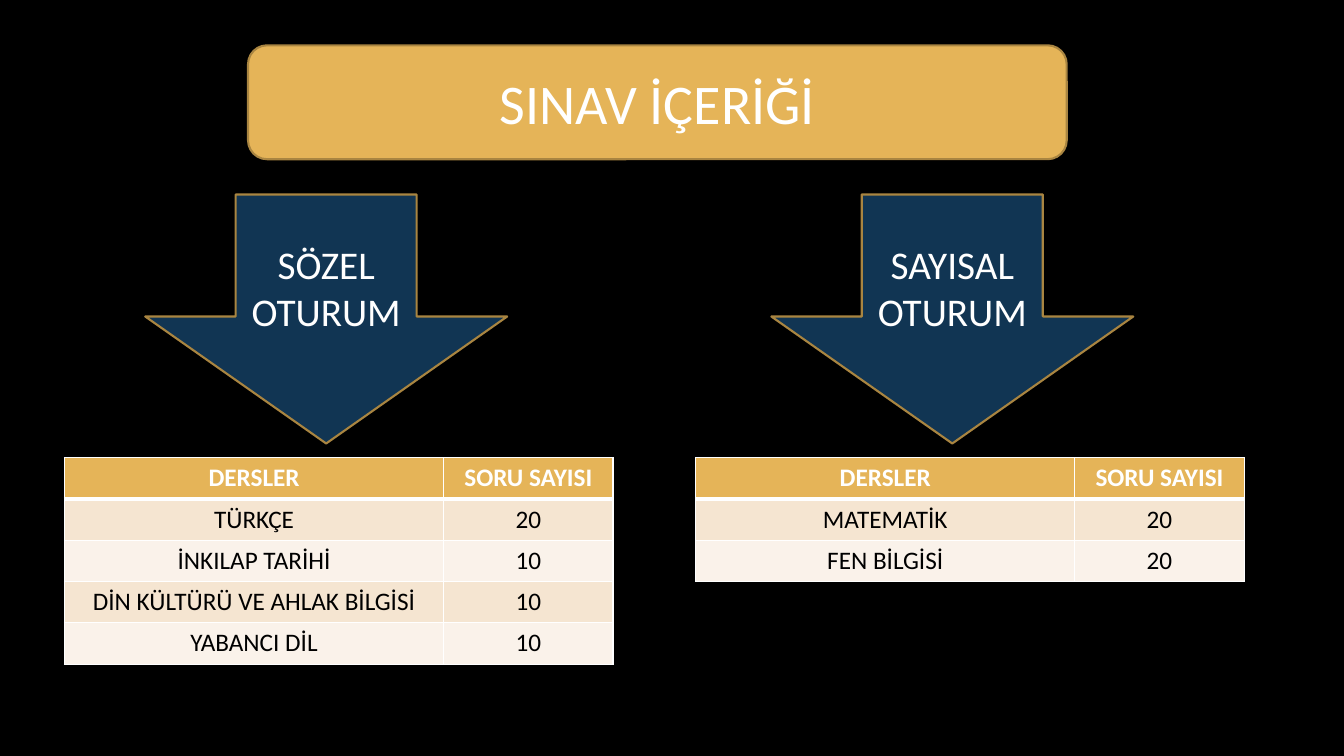
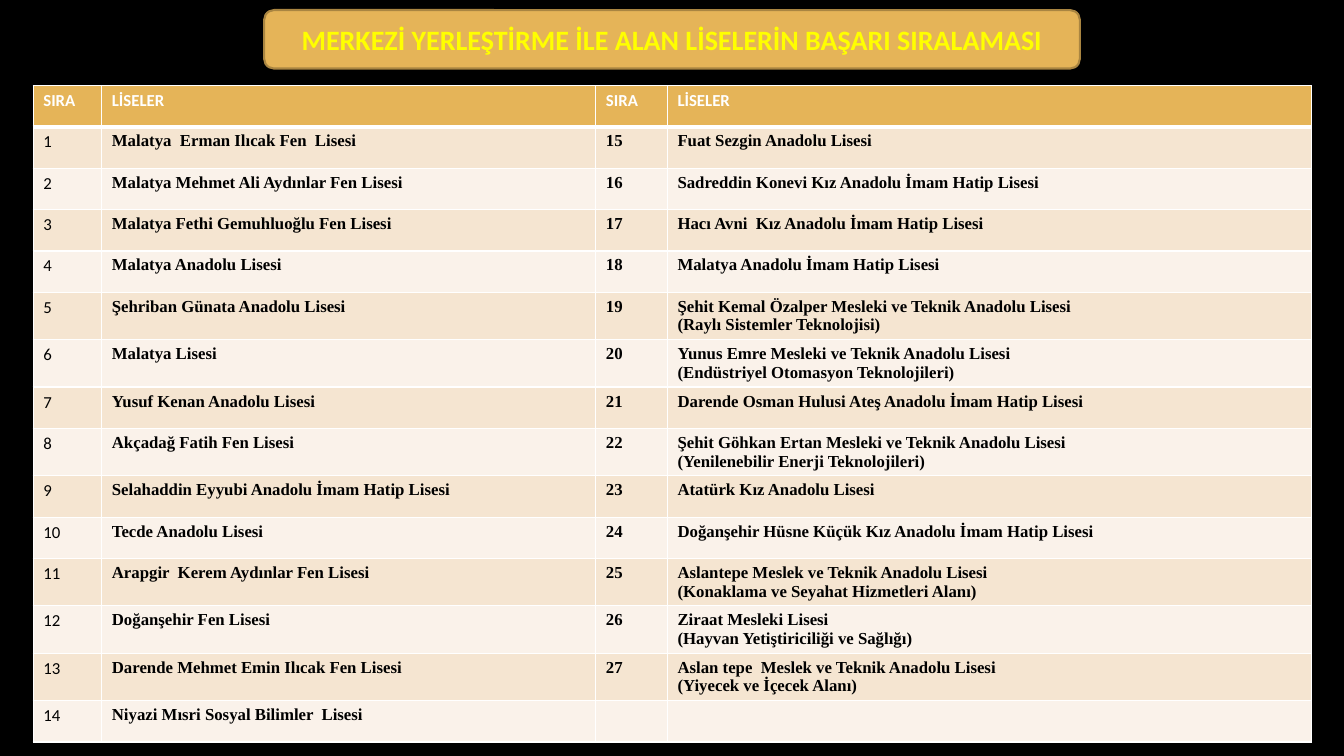
from dataclasses import dataclass
from itertools import zip_longest
from typing import Any

from lxml.etree import SubElement
from pptx import Presentation
from pptx.dml.color import RGBColor
from pptx.enum.shapes import MSO_SHAPE as SHAPE
from pptx.enum.text import MSO_ANCHOR as ANCHOR, MSO_AUTO_SIZE as AUTO_SIZE, PP_ALIGN as ALIGN
from pptx.oxml.ns import qn
from pptx.util import Inches, Pt

BLACK = RGBColor(0x00, 0x00, 0x00)
WHITE = RGBColor(0xFF, 0xFF, 0xFF)
YELLOW = RGBColor(0xFF, 0xFF, 0x00)
GOLD = RGBColor(0xE5, 0xB4, 0x58)
BRONZE = RGBColor(0xA9, 0x85, 0x41)
NAVY = RGBColor(0x11, 0x35, 0x53)
BANDS = (RGBColor(0xF5, 0xE5, 0xD1), RGBColor(0xFA, 0xF2, 0xEA))

ROW_HEIGHT = Inches(0.41)
PLAIN = {"name": "Calibri", "bold": False}
STRONG = {"name": "Calibri", "bold": True}
SERIF = {"name": "Times New Roman", "bold": True}


@dataclass(frozen=True)
class Box:
    left: float
    top: float
    width: float
    height: float

    def emu(self) -> tuple:
        return tuple(Inches(v) for v in (self.left, self.top, self.width, self.height))


@dataclass(frozen=True)
class Session:
    label: str
    arrow_left: float
    table_left: float
    lessons: tuple


@dataclass(frozen=True)
class TableStyle:
    widths: tuple
    size: int
    align: Any
    columns: tuple


SESSIONS = (
    Session("SÖZEL OTURUM", 1.44, 0.64, (
        ("TÜRKÇE", "20"),
        ("İNKILAP TARİHİ", "10"),
        ("DİN KÜLTÜRÜ VE AHLAK BİLGİSİ", "10"),
        ("YABANCI DİL", "10"),
    )),
    Session("SAYISAL OTURUM", 7.65, 6.9, (
        ("MATEMATİK", "20"),
        ("FEN BİLGİSİ", "20"),
    )),
)
LESSON_STYLE = TableStyle((3.76, 1.68), 18, ALIGN.CENTER, (PLAIN, PLAIN))
SCHOOL_STYLE = TableStyle((0.68, 4.9, 0.71, 6.39), 12, ALIGN.LEFT, (PLAIN, SERIF, SERIF, SERIF))

SCHOOLS = (
    "Malatya  Erman Ilıcak Fen  Lisesi",
    "Malatya Mehmet Ali Aydınlar Fen Lisesi",
    "Malatya Fethi Gemuhluoğlu Fen Lisesi",
    "Malatya Anadolu Lisesi",
    "Şehriban Günata Anadolu Lisesi",
    "Malatya Lisesi",
    "Yusuf Kenan Anadolu Lisesi",
    "Akçadağ Fatih Fen Lisesi",
    "Selahaddin Eyyubi Anadolu İmam Hatip Lisesi",
    "Tecde Anadolu Lisesi",
    "Arapgir  Kerem Aydınlar Fen Lisesi",
    "Doğanşehir Fen Lisesi",
    "Darende Mehmet Emin Ilıcak Fen Lisesi",
    "Niyazi Mısri Sosyal Bilimler  Lisesi",
    "Fuat Sezgin Anadolu Lisesi",
    "Sadreddin Konevi Kız Anadolu İmam Hatip Lisesi",
    "Hacı Avni  Kız Anadolu İmam Hatip Lisesi",
    "Malatya Anadolu İmam Hatip Lisesi",
    "Şehit Kemal Özalper Mesleki ve Teknik Anadolu Lisesi\n(Raylı Sistemler Teknolojisi)",
    "Yunus Emre Mesleki ve Teknik Anadolu Lisesi\n(Endüstriyel Otomasyon Teknolojileri)",
    "Darende Osman Hulusi Ateş Anadolu İmam Hatip Lisesi",
    "Şehit Göhkan Ertan Mesleki ve Teknik Anadolu Lisesi\n(Yenilenebilir Enerji Teknolojileri)",
    "Atatürk Kız Anadolu Lisesi",
    "Doğanşehir Hüsne Küçük Kız Anadolu İmam Hatip Lisesi",
    "Aslantepe Meslek ve Teknik Anadolu Lisesi\n(Konaklama ve Seyahat Hizmetleri Alanı)",
    "Ziraat Mesleki Lisesi\n(Hayvan Yetiştiriciliği ve Sağlığı)",
    "Aslan tepe  Meslek ve Teknik Anadolu Lisesi\n(Yiyecek ve İçecek Alanı)",
)


def write(tf: Any, text: str, size: int, color: RGBColor, align: Any, fmt: dict) -> None:
    for i, line in enumerate(text.split("\n")):
        p = tf.add_paragraph() if i else tf.paragraphs[0]
        p.alignment = align
        if not line:
            continue
        r = p.add_run()
        r.text = line
        for name, value in {**fmt, "size": Pt(size)}.items():
            setattr(r.font, name, value)
        r.font.color.rgb = color


def add_panel(s: Any, kind: Any, box: Box, fill: RGBColor) -> Any:
    sp = s.shapes.add_shape(kind, *box.emu())
    sp.shadow.inherit = False
    sp.fill.solid()
    sp.fill.fore_color.rgb = fill
    sp.line.color.rgb = BRONZE
    sp.line.width = Pt(1.5)
    return sp


def write_centred(sp: Any, text: str, size: int, color: RGBColor, fmt: dict) -> None:
    tf = sp.text_frame
    for name, value in {"word_wrap": True, "auto_size": AUTO_SIZE.NONE,
                        "vertical_anchor": ANCHOR.MIDDLE}.items():
        setattr(tf, name, value)
    write(tf, text, size, color, ALIGN.CENTER, fmt)


def add_titled_slide(prs: Any, text: str, box: Box, size: int, color: RGBColor, fmt: dict) -> Any:
    s = prs.slides.add_slide(prs.slide_layouts[5])
    title = s.shapes.title
    for name, value in zip(("left", "top", "width", "height"), box.emu()):
        setattr(title, name, value)
    band = add_panel(s, SHAPE.ROUNDED_RECTANGLE, box, GOLD)
    title._element.addprevious(band._element)
    write_centred(title, text, size, color, fmt)
    return s


def set_borders(cell: Any, row: int) -> None:
    tc_pr = cell._tc.get_or_add_tcPr()
    widths = {"lnL": 1, "lnR": 1, "lnT": 3 if row == 1 else 1, "lnB": 3 if row == 0 else 1}
    for tag, width in widths.items():
        ln = SubElement(tc_pr, qn(f"a:{tag}"), w=str(Pt(width)))
        SubElement(SubElement(ln, qn("a:solidFill")), qn("a:srgbClr"), val=str(WHITE))


def add_grid(s: Any, left: float, top: float, rows: list, style: TableStyle) -> None:
    frame = s.shapes.add_table(len(rows), len(style.widths), Inches(left), Inches(top),
                               Inches(sum(style.widths)), ROW_HEIGHT * len(rows))
    table = frame.table
    table.horz_banding = False
    for column, width in zip(table.columns, style.widths):
        column.width = Inches(width)
    for i, values in enumerate(rows):
        table.rows[i].height = ROW_HEIGHT
        for j, text in enumerate(values):
            cell = table.cell(i, j)
            set_borders(cell, i)
            cell.fill.solid()
            cell.fill.fore_color.rgb = BANDS[(i - 1) % 2] if i else GOLD
            write(cell.text_frame, text, style.size, BLACK if i else WHITE, style.align,
                  style.columns[j] if i else STRONG)


def build_content_slide(prs: Any) -> None:
    s = add_titled_slide(prs, "SINAV İÇERİĞİ", Box(2.46, 0.45, 8.12, 1.13), 40, WHITE, PLAIN)
    for session in SESSIONS:
        arrow = add_panel(s, SHAPE.DOWN_ARROW, Box(session.arrow_left, 1.93, 3.59, 2.47), NAVY)
        arrow.adjustments[1] = 0.51
        write_centred(arrow, session.label, 28, WHITE, PLAIN)
        add_grid(s, session.table_left, 4.54,
                 [("DERSLER", "SORU SAYISI"), *session.lessons], LESSON_STYLE)


def build_ranking_slide(prs: Any) -> None:
    s = add_titled_slide(prs, "MERKEZİ YERLEŞTİRME İLE ALAN LİSELERİN BAŞARI SIRALAMASI",
                         Box(2.62, 0.1, 8.09, 0.58), 20, YELLOW, STRONG)
    ranked = [(str(i), name) for i, name in enumerate(SCHOOLS, 1)]
    half = (len(ranked) + 1) // 2
    pairs = zip_longest(ranked[:half], ranked[half:], fillvalue=("", ""))
    rows = [("SIRA", "LİSELER") * 2, *(first + second for first, second in pairs)]
    add_grid(s, 0.33, 0.85, rows, SCHOOL_STYLE)


def main() -> None:
    prs = Presentation()
    prs.slide_width, prs.slide_height = Inches(13.33), Inches(7.5)
    background = prs.slide_master.background.fill
    background.solid()
    background.fore_color.rgb = BLACK
    build_content_slide(prs)
    build_ranking_slide(prs)
    prs.save("out.pptx")


if __name__ == "__main__":
    main()
